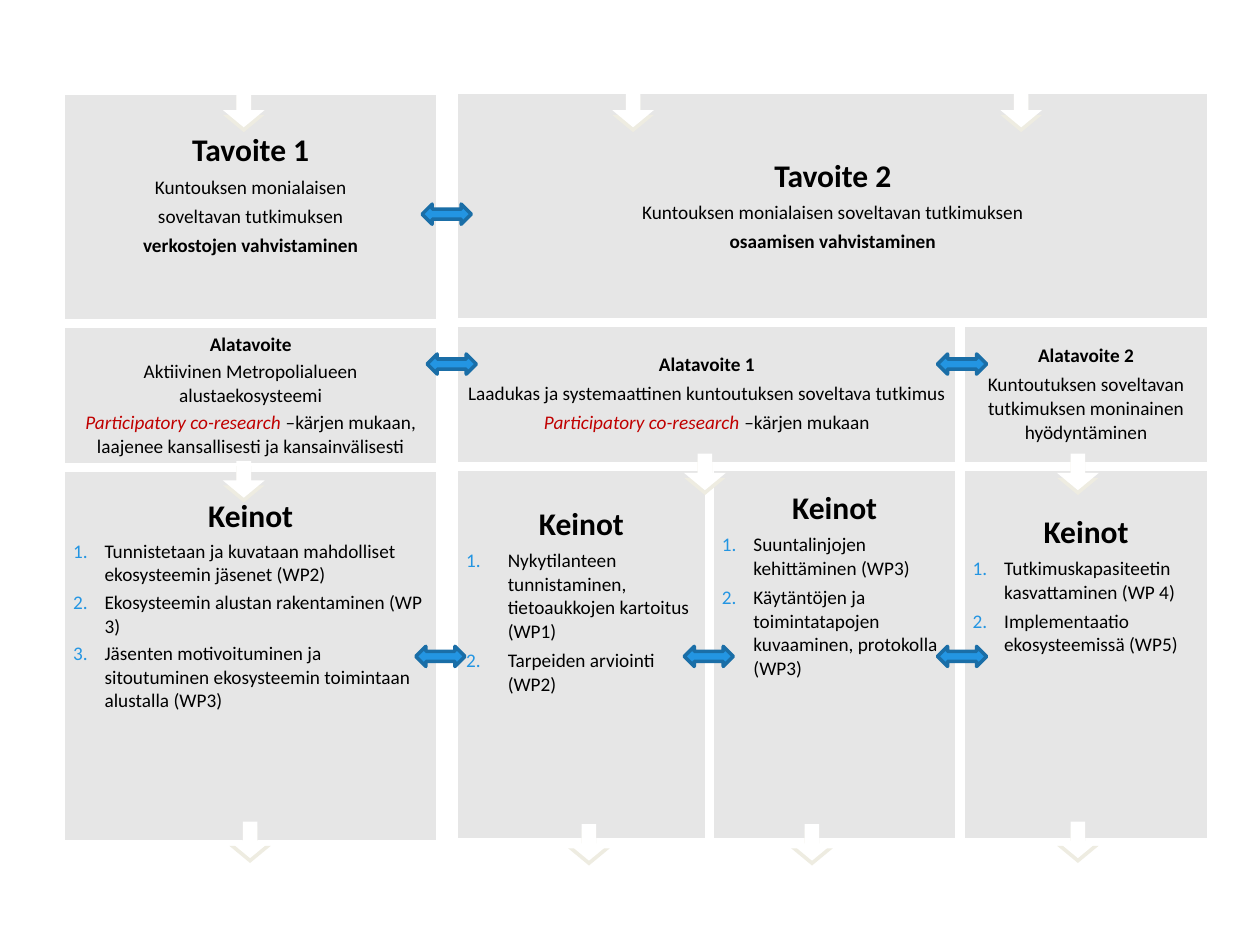
from lxml import etree
from pptx import Presentation
from pptx.dml.color import RGBColor
from pptx.enum.shapes import MSO_SHAPE
from pptx.enum.text import MSO_ANCHOR, PP_ALIGN
from pptx.oxml.ns import qn
from pptx.util import Inches, Pt

DOWN, BOTH_WAYS = MSO_SHAPE.DOWN_ARROW, MSO_SHAPE.LEFT_RIGHT_ARROW
MIDDLE = MSO_ANCHOR.MIDDLE
CENTER, LEFT = PP_ALIGN.CENTER, PP_ALIGN.LEFT
COLORS = {"cell": "E6E6E6", "gap": "FFFFFF", "text": "000000", "accent": "C00000",
          "blue": "2395E2", "blue_edge": "1A6EA7", "shade": "EEECE1"}
LEAD = "Participatory co-research "
ROWS = [1.85, 1.14, 2.99]

NETWORK_GOAL = [("title", "Tavoite 1"), ("body", "Kuntouksen monialaisen"),
                ("body", "soveltavan tutkimuksen"), ("bold", "verkostojen vahvistaminen")]
NETWORK_SUBGOAL = [("bold", "Alatavoite"), ("body", "Aktiivinen Metropolialueen alustaekosysteemi"),
                   ("body", LEAD + "–kärjen mukaan, laajenee kansallisesti ja kansainvälisesti")]
NETWORK_MEANS = [("title", "Keinot"),
                 ("item", "Tunnistetaan ja kuvataan mahdolliset ekosysteemin jäsenet (WP2)"),
                 ("item", "Ekosysteemin alustan rakentaminen (WP 3)"),
                 ("item", "Jäsenten motivoituminen ja sitoutuminen ekosysteemin toimintaan alustalla (WP3)")]
SKILLS_GOAL = [("title", "Tavoite 2"), ("body", "Kuntouksen monialaisen soveltavan tutkimuksen"),
               ("bold", "osaamisen vahvistaminen")]
RESEARCH_SUBGOAL = [("bold", "Alatavoite 1"),
                    ("body", "Laadukas ja systemaattinen kuntoutuksen soveltava tutkimus"),
                    ("body", LEAD + "–kärjen mukaan")]
USE_SUBGOAL = [("bold", "Alatavoite 2"),
               ("body", "Kuntoutuksen soveltavan tutkimuksen moninainen hyödyntäminen")]
SURVEY_MEANS = [("title", "Keinot"),
                ("item", "Nykytilanteen tunnistaminen, tietoaukkojen kartoitus (WP1)"),
                ("item", "Tarpeiden arviointi (WP2)")]
GUIDELINE_MEANS = [("title", "Keinot"), ("item", "Suuntalinjojen kehittäminen (WP3)"),
                   ("item", "Käytäntöjen ja toimintatapojen kuvaaminen, protokolla (WP3)")]
CAPACITY_MEANS = [("title", "Keinot"), ("item", "Tutkimuskapasiteetin kasvattaminen (WP 4)"),
                  ("item", "Implementaatio ekosysteemissä (WP5)")]


def rgb(name):
    return RGBColor.from_string(COLORS[name])


def add_color(parent, name):
    etree.SubElement(parent, qn("a:srgbClr"), val=COLORS[name])


class GoalSlide:
    """Draws the goal tables and arrows of one slide in a shared style."""

    font = "Calibri"

    def __init__(self, slide):
        self.slide = slide

    def table(self, left, top, widths):
        frame = self.slide.shapes.add_table(len(ROWS), len(widths), Inches(left), Inches(top),
                                            Inches(sum(widths)), Inches(sum(ROWS)))
        table = frame.table
        table.first_row = table.horz_banding = False
        for column, width in zip(table.columns, widths):
            column.width = Inches(width)
        for row, height in zip(table.rows, ROWS):
            row.height = Inches(height)
        for cell in table.iter_cells():
            properties = cell._tc.get_or_add_tcPr()
            for side in ("a:lnL", "a:lnR", "a:lnT", "a:lnB"):
                border = etree.SubElement(properties, qn(side), w=str(Pt(6)))
                add_color(etree.SubElement(border, qn("a:solidFill")), "gap")
            cell.fill.solid()
            cell.fill.fore_color.rgb = rgb("cell")
        return table

    def fill_cell(self, cell, content, gap=3, bottom=0.05, indent=0.25):
        cell.vertical_anchor = MIDDLE
        cell.margin_bottom = Inches(bottom)
        frame = cell.text_frame
        for index, (role, text) in enumerate(content):
            paragraph = frame.paragraphs[0] if index == 0 else frame.add_paragraph()
            self.set_text(paragraph, role, text)
            paragraph.space_before = Pt(gap)
            paragraph.alignment = LEFT if role == "item" else CENTER
            if role == "item":
                self.number(paragraph, indent)

    def set_text(self, paragraph, role, text):
        if text.startswith(LEAD):
            paragraph.text = LEAD
            paragraph.add_run().text = text.removeprefix(LEAD)
        else:
            paragraph.text = text
        for run in paragraph.runs:
            font = run.font
            font.name = self.font
            font.size = Pt(18 if role == "title" else 11)
            font.bold = role in ("title", "bold")
            font.italic = run.text == LEAD
            font.color.rgb = rgb("accent" if run.text == LEAD else "text")

    def number(self, paragraph, indent):
        properties = paragraph._p.get_or_add_pPr()
        properties.set("marL", str(Inches(indent)))
        properties.set("indent", str(-Inches(indent)))
        add_color(etree.SubElement(properties, qn("a:buClr")), "blue")
        etree.SubElement(properties, qn("a:buAutoNum"), type="arabicPeriod")

    def arrow(self, kind, left, top, width, height, color):
        arrow = self.slide.shapes.add_shape(kind, Inches(left), Inches(top),
                                            Inches(width), Inches(height))
        arrow.shadow.inherit = False
        arrow.fill.solid()
        arrow.fill.fore_color.rgb = rgb(color)
        return arrow

    def down_arrow(self, left, top):
        arrow = self.arrow(DOWN, left, top, 0.33, 0.29, "gap")
        arrow.line.fill.background()
        arrow.adjustments[0], arrow.adjustments[1] = 0.35, 0.47
        effects = arrow._element.spPr.find(qn("a:effectLst"))
        shadow = etree.SubElement(effects, qn("a:outerShdw"), blurRad="0", dist=str(Pt(2.8)),
                                  dir="5400000", algn="t", rotWithShape="0")
        add_color(shadow, "shade")

    def link_arrow(self, left, top):
        arrow = self.arrow(BOTH_WAYS, left, top, 0.39, 0.16, "blue")
        arrow.line.color.rgb = rgb("blue_edge")
        arrow.line.width = Pt(2)


def main():
    deck = Presentation()
    deck.slide_width, deck.slide_height = Inches(10), Inches(7.5)
    page = GoalSlide(deck.slides.add_slide(deck.slide_layouts[6]))

    skills = page.table(3.6, 0.71, [2.03, 1.99, 2.0])
    skills.cell(0, 0).merge(skills.cell(0, 2))
    skills.cell(1, 0).merge(skills.cell(1, 1))
    page.fill_cell(skills.cell(0, 0), SKILLS_GOAL)
    page.fill_cell(skills.cell(1, 0), RESEARCH_SUBGOAL)
    page.fill_cell(skills.cell(1, 2), USE_SUBGOAL)
    page.fill_cell(skills.cell(2, 0), SURVEY_MEANS, bottom=0.9, indent=0.33)
    page.fill_cell(skills.cell(2, 1), GUIDELINE_MEANS, bottom=1.15)
    page.fill_cell(skills.cell(2, 2), CAPACITY_MEANS, bottom=1.15)

    page.down_arrow(5.43, 3.6)

    network = page.table(0.48, 0.72, [3.02])
    page.fill_cell(network.cell(0, 0), NETWORK_GOAL, bottom=0.25)
    page.fill_cell(network.cell(1, 0), NETWORK_SUBGOAL, gap=2)
    page.fill_cell(network.cell(2, 0), NETWORK_MEANS, gap=2, bottom=0.85)

    for left, top in [(1.77, 0.72), (4.86, 0.72), (7.94, 0.72), (1.77, 3.66), (8.39, 3.6),
                      (1.82, 6.52), (4.51, 6.54), (6.28, 6.54), (8.39, 6.52)]:
        page.down_arrow(left, top)
    for left, top in [(3.35, 1.62), (3.39, 2.81), (7.44, 2.81),
                      (3.3, 5.13), (5.43, 5.13), (7.44, 5.13)]:
        page.link_arrow(left, top)

    deck.save("out.pptx")


if __name__ == "__main__":
    main()
